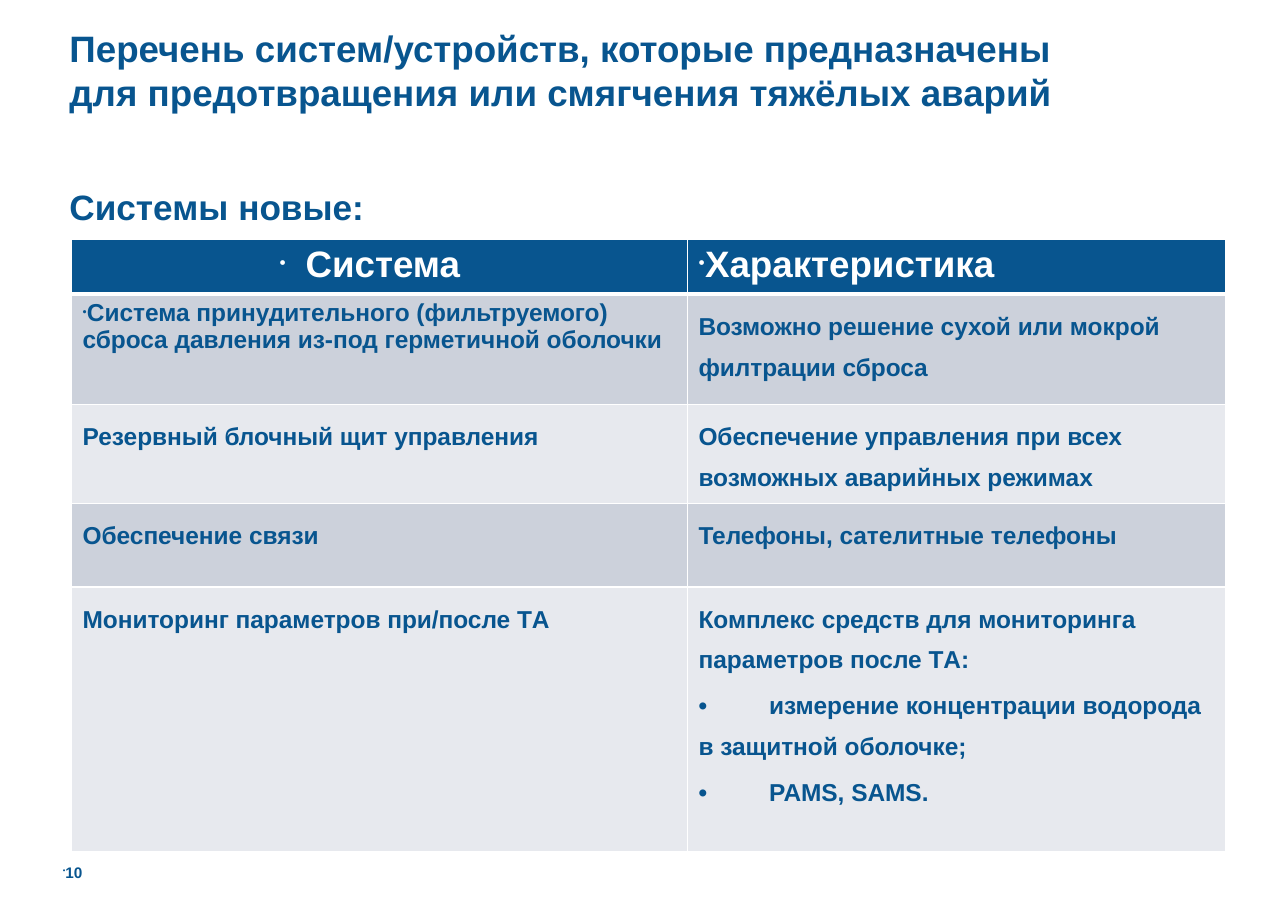
import pptx
import pptx.dml.color
import pptx.enum.text
import pptx.util
from lxml import etree
from pptx.oxml import parse_xml
from pptx.oxml.ns import nsdecls, qn

Pt = pptx.util.Pt
Inches = pptx.util.Inches
ANCHOR = pptx.enum.text.MSO_ANCHOR
ALIGN = pptx.enum.text.PP_ALIGN

WIDTH, HEIGHT = Inches(11.69), Inches(8.27)
BLUE, WHITE = "08558F", "FFFFFF"
BANDS = ["CCD1DB", "E7E9EE"]

# Column widths and row heights, in percent of the slide
COLUMNS = [47.82, 41.75]
ROWS = [5.8, 12.09, 10.16, 9.19, 29.02]

HEADINGS = ["Система", "Характеристика"]
SYSTEMS = [
    ("Система принудительного (фильтруемого) сброса давления из-под герметичной оболочки",
     ["Возможно решение сухой или мокрой филтрации сброса"]),
    ("Резервный блочный щит управления",
     ["Обеспечение управления при всех возможных аварийных режимах"]),
    ("Обеспечение связи", ["Телефоны, сателитные телефоны"]),
    ("Мониторинг параметров при/после ТA",
     ["Комплекс средств для мониторинга параметров после ТA:",
      "•\tизмерение концентрации водорода в защитной оболочке;",
      "•\tPAMS, SAMS."]),
]


def across(percent):
    return round(WIDTH * percent / 100)


def down(percent):
    return round(HEIGHT * percent / 100)


def color(code):
    return pptx.dml.color.RGBColor.from_string(code)


def add_bullet(para):
    properties = para._p.get_or_add_pPr()
    etree.SubElement(properties, qn("a:buSzPct"), val="50000")
    etree.SubElement(properties, qn("a:buChar"), char="•")


def add_tab_stop(para, position):
    tabs = etree.SubElement(para._p.get_or_add_pPr(), qn("a:tabLst"))
    etree.SubElement(tabs, qn("a:tab"), pos=str(position), algn="l")


def write(frame, texts, size=16, fill=BLUE, align=ALIGN.LEFT, spacing=1.0, bullet=False):
    """Fill a text frame with bold paragraphs in one format."""
    for index, text in enumerate(texts):
        para = frame.paragraphs[0] if index == 0 else frame.add_paragraph()
        para.alignment = align
        para.line_spacing = spacing
        para.space_before = Pt(0.2 * size if index else 0)
        if bullet:
            add_bullet(para)
        if "\t" in text:
            add_tab_stop(para, Inches(0.64))
        span = para.add_run()
        span.text = text
        span.font.name = "Arial"
        span.font.size = Pt(size)
        span.font.bold = True
        span.font.color.rgb = color(fill)


def add_text(page, text, left, top, width, height, anchor=ANCHOR.TOP, inset=(0.06, 0.03), **style):
    box = page.shapes.add_textbox(across(left), down(top), across(width), down(height))
    frame = box.text_frame
    frame.word_wrap = True
    frame.vertical_anchor = anchor
    frame.margin_left = frame.margin_right = Inches(inset[0])
    frame.margin_top = frame.margin_bottom = Inches(inset[1])
    write(frame, [text], **style)


def paint_cell(cell, fill, top=1, bottom=1):
    """White borders, then the fill, as the schema orders them."""
    properties = cell._tc.get_or_add_tcPr()
    for side, points in zip("LRTB", (1, 1, top, bottom)):
        properties.append(parse_xml(
            f'<a:ln{side} {nsdecls("a")} w="{Pt(points)}"><a:solidFill>'
            f'<a:srgbClr val="{WHITE}"/></a:solidFill></a:ln{side}>'))
    cell.fill.solid()
    cell.fill.fore_color.rgb = color(fill)


def add_systems_table(page):
    frame = page.shapes.add_table(len(ROWS), len(COLUMNS), across(5.56), down(26.24),
                                  across(sum(COLUMNS)), down(sum(ROWS)))
    table = frame.table
    for column, share in zip(table.columns, COLUMNS):
        column.width = across(share)
    for row, share in zip(table.rows, ROWS):
        row.height = down(share)

    # Heading row
    for index, heading in enumerate(HEADINGS):
        cell = table.cell(0, index)
        paint_cell(cell, BLUE, bottom=3)
        write(cell.text_frame, [heading], size=24, fill=WHITE, bullet=True,
              align=ALIGN.LEFT if index else ALIGN.CENTER)

    # Banded rows: only the first system is bulleted and single spaced
    for number, (system, features) in enumerate(SYSTEMS, start=1):
        first = number == 1
        for index, texts in enumerate([[system], features]):
            cell = table.cell(number, index)
            paint_cell(cell, BANDS[(number - 1) % 2], top=3 if first else 1)
            bulleted = first and index == 0
            write(cell.text_frame, texts, bullet=bulleted, spacing=1.0 if bulleted else 1.5)


def main():
    deck = pptx.Presentation()
    deck.slide_width, deck.slide_height = WIDTH, HEIGHT
    page = deck.slides.add_slide(deck.slide_layouts[6])

    # Title and subtitle
    add_text(page, "Перечень систем/устройств, которые предназначены для предотвращения "
             "или смягчения тяжёлых аварий", 4.88, 2.42, 78.79, 10.52,
             anchor=ANCHOR.MIDDLE, size=24)
    add_text(page, "Системы новые:", 4.88, 17.65, 45.17, 69.53, size=23, spacing=1.5)

    # Table and page number
    add_systems_table(page)
    add_text(page, "10", 4.88, 92.02, 3.34, 4.72, anchor=ANCHOR.BOTTOM, inset=(0, 0),
             size=10, bullet=True)

    deck.save("out.pptx")


if __name__ == "__main__":
    main()
